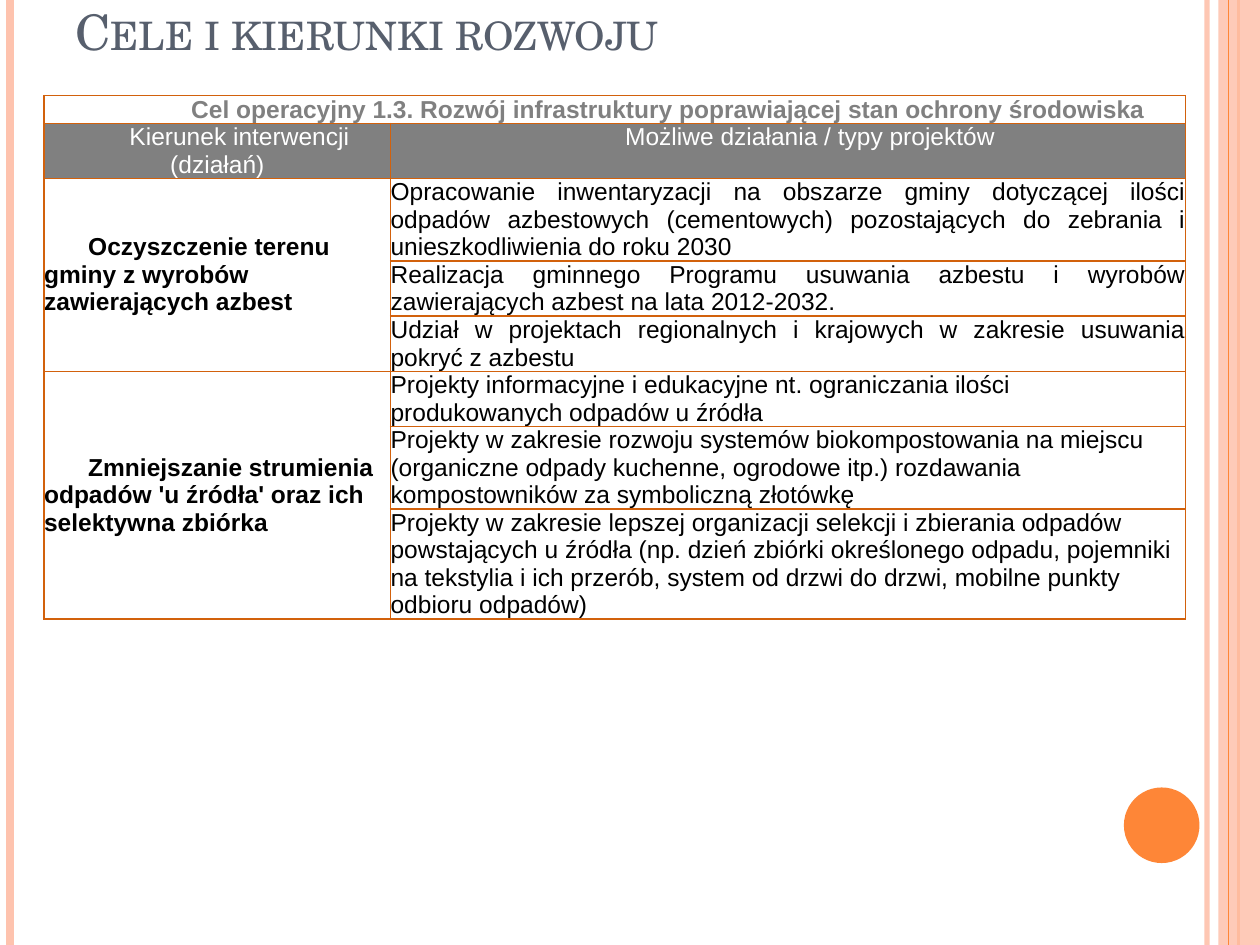
import dataclasses
import typing

import pptx
import pptx.dml.color
import pptx.enum.shapes
import pptx.enum.text
import pptx.oxml
import pptx.oxml.ns
import pptx.util

Inches = pptx.util.Inches
Pt = pptx.util.Pt
Align = pptx.enum.text.PP_ALIGN
Anchor = pptx.enum.text.MSO_ANCHOR
Shape = pptx.enum.shapes.MSO_SHAPE

PEACH, ORANGE, RUST, GRAY = "FEC3AE", "FE8637", "D2610C", "808080"
COLUMN_WIDTHS = (2.75, 6.31)
ROW_HEIGHTS = (0.16, 0.3, 0.51, 0.4, 0.4, 0.36, 0.51, 0.51)


@dataclasses.dataclass
class Stripe:
    x: float
    color: str
    width: float
    opacity: int = 100


@dataclasses.dataclass
class Cell:
    row: int
    column: int
    text: str
    align: Align = Align.LEFT
    anchor: Anchor = Anchor.MIDDLE
    color: str = "000000"
    bold: bool = False
    fill: typing.Optional[str] = None
    margin: float = 0
    indent: float = 0
    rows: int = 1
    columns: int = 1


STRIPES = [
    Stripe(9.58, PEACH, 3, 93),
    Stripe(0.08, PEACH, 4.5),
    Stripe(9.83, ORANGE, 1.5),
]
INNER_STRIPE = Stripe(9.75, ORANGE, 0.75)

CELLS = [
    Cell(0, 0, "Cel operacyjny 1.3. Rozwój infrastruktury poprawiającej stan ochrony środowiska",
         Align.CENTER, Anchor.TOP, GRAY, True, margin=0.5, indent=0.35, columns=2),
    Cell(1, 0, "Kierunek interwencji (działań)",
         Align.CENTER, Anchor.TOP, "FFFFFF", fill=GRAY, indent=0.35),
    Cell(1, 1, "Możliwe działania / typy projektów",
         Align.CENTER, Anchor.TOP, "FFFFFF", fill=GRAY, indent=0.35),
    Cell(2, 0, "Oczyszczenie terenu gminy z wyrobów zawierających azbest",
         bold=True, indent=0.35, rows=3),
    Cell(2, 1, "Opracowanie inwentaryzacji na obszarze gminy dotyczącej ilości odpadów azbestowych "
         "(cementowych) pozostających do zebrania i unieszkodliwienia do roku 2030",
         Align.JUSTIFY, Anchor.TOP),
    Cell(3, 1, "Realizacja gminnego Programu usuwania azbestu i wyrobów zawierających azbest "
         "na lata 2012-2032.", Align.JUSTIFY, Anchor.TOP),
    Cell(4, 1, "Udział w projektach regionalnych i krajowych w zakresie usuwania pokryć z azbestu",
         Align.JUSTIFY),
    Cell(5, 0, "Zmniejszanie strumienia odpadów 'u źródła' oraz ich selektywna zbiórka",
         bold=True, indent=0.35, rows=3),
    Cell(5, 1, "Projekty informacyjne i edukacyjne nt. ograniczania ilości produkowanych odpadów "
         "u źródła"),
    Cell(6, 1, "Projekty w zakresie rozwoju systemów biokompostowania na miejscu (organiczne odpady "
         "kuchenne, ogrodowe itp.) rozdawania kompostowników za symboliczną złotówkę"),
    Cell(7, 1, "Projekty w zakresie lepszej organizacji selekcji i zbierania odpadów powstających "
         "u źródła (np. dzień zbiórki określonego odpadu, pojemniki na tekstylia i ich przerób, "
         "system od drzwi do drzwi, mobilne punkty odbioru odpadów)"),
]


def rgb(value: str) -> pptx.dml.color.RGBColor:
    """Turn a hex string into a colour."""
    return pptx.dml.color.RGBColor.from_string(value)


def add_element(parent, tag: str, **attributes: str):
    """Append a DrawingML element to its parent."""
    element = pptx.oxml.parse_xml(f"<{tag} {pptx.oxml.ns.nsdecls('a')}/>")
    for name, value in attributes.items():
        element.set(name, value)
    parent.append(element)
    return element


def set_opacity(properties, percent: int) -> None:
    """Make the first solid colour below the properties translucent."""
    color = properties.find(".//" + pptx.oxml.ns.qn("a:srgbClr"))
    add_element(color, "a:alpha", val=str(percent * 1000))


def add_stripe(slide, stripe: Stripe) -> None:
    """Draw a vertical line over the full slide height."""
    x = Inches(stripe.x)
    connector = slide.shapes.add_connector(
        pptx.enum.shapes.MSO_CONNECTOR.STRAIGHT, x, 0, x, Inches(7.5))
    connector.line.color.rgb = rgb(stripe.color)
    connector.line.width = Pt(stripe.width)
    properties = connector._element.spPr
    if stripe.opacity < 100:
        set_opacity(properties, stripe.opacity)
    add_element(properties, "a:effectLst")


def add_filled_shape(slide, kind: Shape, left: float, top: float, width: float,
                     height: float, color: str):
    """Draw a flat shape without an outline."""
    shape = slide.shapes.add_shape(
        kind, Inches(left), Inches(top), Inches(width), Inches(height))
    shape.shadow.inherit = False
    shape.fill.solid()
    shape.fill.fore_color.rgb = rgb(color)
    shape.line.fill.background()
    return shape


def add_borders(cell) -> None:
    """Outline a table cell on all four sides."""
    properties = cell._tc.get_or_add_tcPr()
    for side in ("lnL", "lnR", "lnT", "lnB"):
        line = add_element(properties, f"a:{side}", w=str(Pt(1)))
        add_element(add_element(line, "a:solidFill"), "a:srgbClr", val=RUST)


def fill_cell(table, content: Cell) -> None:
    """Merge, fill and write one table cell."""
    cell = table.cell(content.row, content.column)
    if content.rows * content.columns > 1:
        cell.merge(table.cell(content.row + content.rows - 1,
                              content.column + content.columns - 1))
    if content.fill:
        cell.fill.solid()
        cell.fill.fore_color.rgb = rgb(content.fill)
    cell.vertical_anchor = content.anchor
    cell.text_frame.text = content.text
    paragraph = cell.text_frame.paragraphs[0]
    paragraph.alignment = content.align
    properties = paragraph._p.get_or_add_pPr()
    properties.set("marL", str(Inches(content.margin)))
    properties.set("indent", str(Inches(content.indent)))
    font = paragraph.runs[0].font
    font.name, font.size, font.bold = "Arial", Pt(14), content.bold
    font.color.rgb = rgb(content.color)


def add_goal_table(slide) -> None:
    """Build the table of goals and projects."""
    table = slide.shapes.add_table(
        len(ROW_HEIGHTS), len(COLUMN_WIDTHS), Inches(0.35), Inches(0.76),
        Inches(sum(COLUMN_WIDTHS)), Inches(sum(ROW_HEIGHTS))).table
    table.first_row = table.horz_banding = False
    for column, width in zip(table.columns, COLUMN_WIDTHS):
        column.width = Inches(width)
    for row, height in zip(table.rows, ROW_HEIGHTS):
        row.height = Inches(height)
    for cell in table.iter_cells():
        cell.margin_left = cell.margin_right = cell.margin_top = cell.margin_bottom = 0
        add_borders(cell)
        cell.fill.background()
    for content in CELLS:
        fill_cell(table, content)


def add_title(slide) -> None:
    """Write the slide title in small capitals."""
    box = slide.shapes.add_textbox(Inches(0.5), Inches(-0.11), Inches(8.17), Inches(0.64))
    frame = box.text_frame
    frame.word_wrap = True
    frame.vertical_anchor = Anchor.BOTTOM
    frame.text = "Cele i kierunki rozwoju"
    run = frame.paragraphs[0].runs[0]
    run.font.name, run.font.size = "TeX Gyre Schola", Pt(28)
    run.font.color.rgb = rgb("575F6D")
    run._r.get_or_add_rPr().set("cap", "small")


def main() -> None:
    """Build and save the slide."""
    presentation = pptx.Presentation()
    presentation.slide_width, presentation.slide_height = Inches(10), Inches(7.5)
    slide = presentation.slides.add_slide(presentation.slide_layouts[6])
    for stripe in STRIPES:
        add_stripe(slide, stripe)
    band = add_filled_shape(slide, Shape.RECTANGLE, 9.67, 0, 0.33, 7.5, PEACH)
    set_opacity(band._element.spPr, 87)
    add_stripe(slide, INNER_STRIPE)
    add_filled_shape(slide, Shape.OVAL, 8.92, 6.25, 0.6, 0.6, ORANGE)
    add_goal_table(slide)
    add_title(slide)
    presentation.save("out.pptx")


if __name__ == "__main__":
    main()
